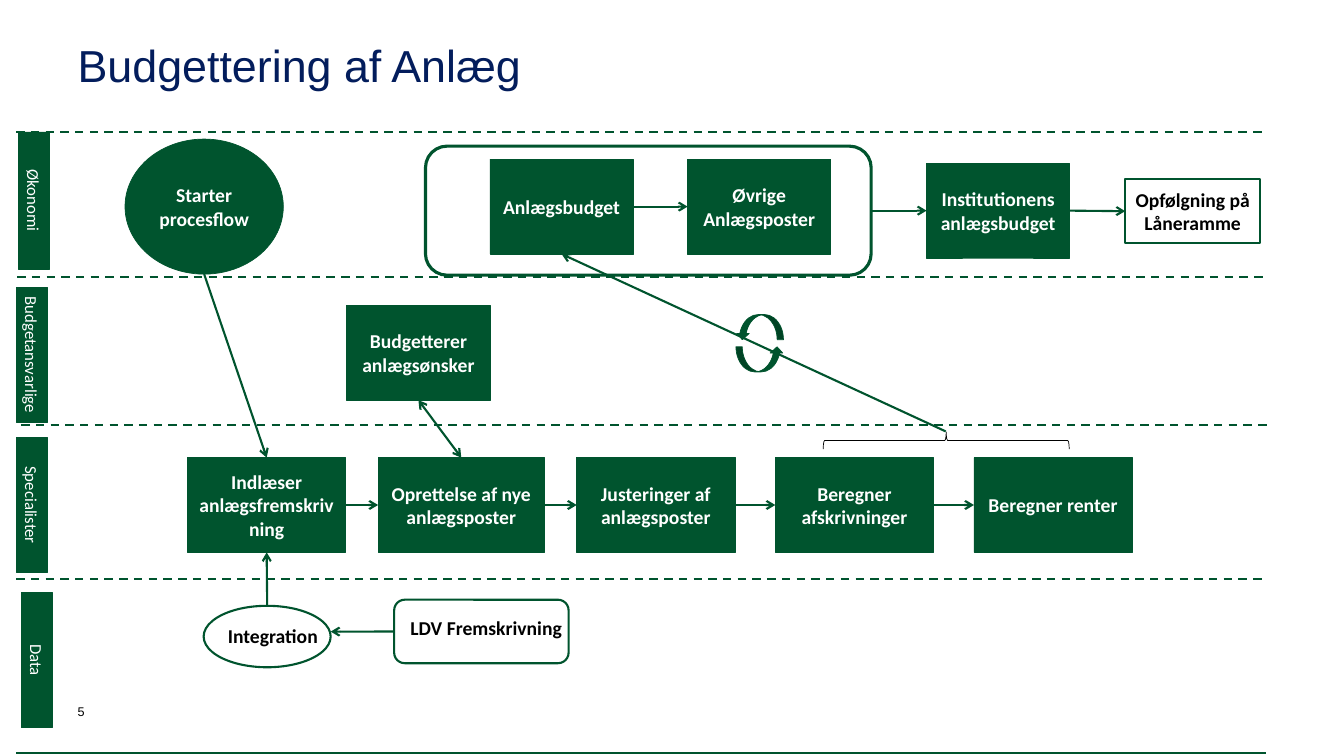
from lxml.etree import SubElement
from pptx import Presentation
from pptx.dml.color import RGBColor
from pptx.enum.dml import MSO_LINE
from pptx.enum.shapes import MSO_CONNECTOR, MSO_SHAPE
from pptx.enum.text import MSO_ANCHOR, PP_ALIGN
from pptx.oxml.ns import qn
from pptx.util import Inches, Pt

COLORS = {"green": "00542E", "navy": "031D5C", "white": "FFFFFF", "black": "000000"}
SIDES = {"top": (0.5, 0), "bottom": (0.5, 1), "left": (0, 0.5), "right": (1, 0.5),
         "upper right": (1, 0.42)}
BODY = {"name": "Calibri", "size": Pt(14), "bold": True}
LANE = {"name": "Calibri", "size": Pt(12), "bold": False}
TITLE = {"name": "Arial", "size": Pt(32), "bold": False}
NUMBER = {"name": "Arial", "size": Pt(9), "bold": False}
NO_INSETS = (0, 0, 0, 0)

# Grid of the specialist row and the shared box sizes
COLUMN, STEP, ROW = 3.75, 1.97, 4.54
WIDE, NARROW, HIGH = 1.57, 1.42, 0.94
LANE_WIDTH, LANE_HEIGHT = 0.31, 1.34
LINE_LENGTH = 12.4

presentation = Presentation()
presentation.slide_width, presentation.slide_height = Inches(13.33), Inches(7.5)
slide = presentation.slides.add_slide(presentation.slide_layouts[5])
shapes = slide.shapes


def write(shape, text, color, formats, align, anchor=MSO_ANCHOR.TOP, insets=None):
    frame = shape.text_frame
    frame.text = text
    frame.word_wrap = True
    frame.vertical_anchor = anchor
    if insets:
        sides = ("margin_left", "margin_top", "margin_right", "margin_bottom")
        for side, inset in zip(sides, insets):
            setattr(frame, side, Inches(inset))
    paragraph = frame.paragraphs[0]
    paragraph.alignment = align
    for run in paragraph.runs:
        for key, value in formats.items():
            setattr(run.font, key, value)
        run.font.color.rgb = RGBColor.from_string(COLORS[color])


def connect(start, end, dash=None, heads=()):
    line = shapes.add_connector(MSO_CONNECTOR.STRAIGHT, *map(Inches, start + end))
    line.line.color.rgb = RGBColor.from_string(COLORS["green"])
    line.line.width = Pt(1.5)
    if dash:
        line.line.dash_style = dash
    for head in heads:
        SubElement(line.line._get_or_add_ln(), qn(f"a:{head}"), type="arrow")
    SubElement(line._element.spPr, qn("a:effectLst"))


title = shapes.title
title.left, title.top, title.width, title.height = map(Inches, (0.77, 0.43, 11.8, 1.02))
write(title, "Budgettering af Anlæg", "navy", TITLE, PP_ALIGN.LEFT, insets=(0, 0, 1.13, 0))
title.text_frame.paragraphs[0].line_spacing = 0.9

# Lane dividers
for left, top, dash in [(0.16, 1.31, MSO_LINE.DASH), (0.17, 2.75, MSO_LINE.DASH),
                        (0.21, 4.22, MSO_LINE.DASH), (0.16, 5.74, MSO_LINE.DASH),
                        (0.16, 7.47, None)]:
    connect((left, top), (left + LINE_LENGTH, top), dash)

# Name: preset, box, fill, line colour, line width, text colour, rotation
RECT, OVAL, ROUND = MSO_SHAPE.RECTANGLE, MSO_SHAPE.OVAL, MSO_SHAPE.ROUNDED_RECTANGLE
solid = ("green", "green", 0.5, "white", 0)
hollow = (None, "green", 1.5, "black", 0)
lanes = {
    "Økonomi": (RECT, (0.18, 1.31, LANE_WIDTH, 1.36), *solid),
    "Budgetansvarlige": (RECT, (0.16, 2.85, LANE_WIDTH, LANE_HEIGHT), *solid),
    "Specialister": (RECT, (0.16, 4.34, LANE_WIDTH, LANE_HEIGHT), *solid),
    "Data": (RECT, (0.21, 5.88, LANE_WIDTH, LANE_HEIGHT), *solid),
}
steps = {
    "Starter procesflow": (OVAL, (1.24, 1.38, WIDE, 1.34), *solid),
    "Budgetterer anlægsønsker": (RECT, (3.44, 3.03, NARROW, HIGH), *solid),
    "Indlæser\vanlægsfremskrivning": (RECT, (1.86, ROW, WIDE, HIGH), *solid),
    "Oprettelse af nye anlægsposter": (RECT, (COLUMN, ROW, 1.65, HIGH), *solid),
    "Justeringer af anlægsposter": (RECT, (COLUMN + STEP, ROW, WIDE, HIGH), *solid),
    "Beregner afskrivninger": (RECT, (COLUMN + 2 * STEP, ROW, WIDE, HIGH), *solid),
    "Beregner renter": (RECT, (COLUMN + 3 * STEP, ROW, WIDE, HIGH), *solid),
    "Anlægsbudget": (RECT, (4.86, 1.58, NARROW, HIGH), *solid),
    "Øvrige Anlægsposter": (RECT, (6.82, 1.58, NARROW, HIGH), *solid),
    "Institutionens anlægsbudget": (RECT, (9.19, 1.62, NARROW, HIGH), *solid),
    "Opfølgning på Låneramme": (RECT, (11.16, 1.78, 1.34, 0.63), *hollow),
}
outlines = {
    "budget frame": (ROUND, (4.22, 1.45, 4.42, 1.28), None, "green", 2.25, None, 0),
    "integration": (OVAL, (2.02, 6.01, 1.26, 0.61), *hollow),
    "projection": (ROUND, (3.91, 5.95, 1.73, 0.63), *hollow),
    "brace": (MSO_SHAPE.RIGHT_BRACE, (9.3, 3.15, 0.17, 2.44), None, "black", 0.5, None, 270),
    "cycle down": (MSO_SHAPE.CURVED_UP_ARROW, (7.3, 3.44, 0.47, 0.25), *solid),
    "cycle up": (MSO_SHAPE.CURVED_UP_ARROW, (7.3, 3.12, 0.47, 0.25), *solid[:4], 180),
}
nodes = {**lanes, **steps, **outlines}

for name, (preset, box, fill, line, width, color, rotation) in nodes.items():
    shape = shapes.add_shape(preset, *map(Inches, box))
    shape.shadow.inherit = False
    shape.rotation = rotation
    if fill:
        shape.fill.solid()
        shape.fill.fore_color.rgb = RGBColor.from_string(COLORS[fill])
    else:
        shape.fill.background()
    shape.line.color.rgb = RGBColor.from_string(COLORS[line])
    shape.line.width = Pt(width)
    if name in lanes:
        write(shape, name, color, LANE, PP_ALIGN.CENTER, MSO_ANCHOR.MIDDLE, NO_INSETS)
        shape.text_frame._txBody.bodyPr.set("vert", "vert")
    elif name in steps:
        write(shape, name, color, BODY, PP_ALIGN.CENTER, MSO_ANCHOR.MIDDLE)

for text, box, formats in [("Integration", (2.26, 6.19, 0.94, 0.24), BODY),
                           ("LDV Fremskrivning", (4.07, 6.11, 1.57, 0.24), BODY),
                           ("5", (0.77, 6.98, 0.31, 0.39), NUMBER)]:
    label = shapes.add_textbox(*map(Inches, box))
    write(label, text, "black", formats, PP_ALIGN.LEFT, insets=NO_INSETS)

# Arrows run from a side of one box to a side of another
boxes = {name: node[1] for name, node in nodes.items()}
boxes["brace"] = (8.16, 4.28, 2.44, 0.17)  # as it lies after the turn
one_way, both_ways = ("tailEnd",), ("headEnd", "tailEnd")
arrows = [
    ("Starter procesflow", "bottom", "Indlæser\vanlægsfremskrivning", "top", one_way),
    ("Oprettelse af nye anlægsposter", "top", "Budgetterer anlægsønsker", "bottom", both_ways),
    ("integration", "top", "Indlæser\vanlægsfremskrivning", "bottom", one_way),
    ("projection", "left", "integration", "upper right", one_way),
    ("brace", "top", "Anlægsbudget", "bottom", one_way),
]
for chain in [list(steps)[2:7],
              ["Anlægsbudget", "Øvrige Anlægsposter"],
              ["budget frame", "Institutionens anlægsbudget", "Opfølgning på Låneramme"]]:
    arrows += [(first, "right", second, "left", one_way)
               for first, second in zip(chain, chain[1:])]

for first, leaving, second, entering, heads in arrows:
    ends = []
    for name, side in [(first, leaving), (second, entering)]:
        left, top, width, height = boxes[name]
        across, down = SIDES[side]
        ends.append((left + across * width, top + down * height))
    connect(*ends, heads=heads)

presentation.save("out.pptx")
